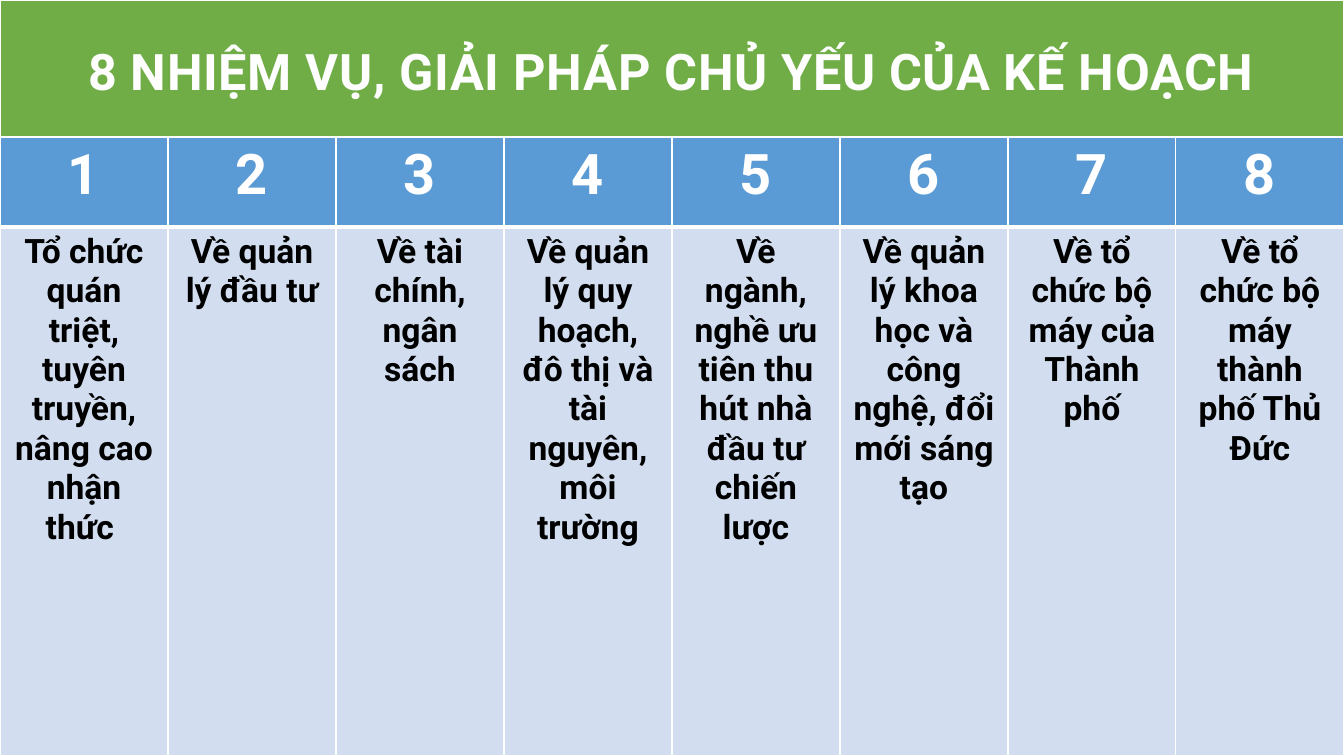
from lxml import etree
from pptx import Presentation
from pptx.dml.color import RGBColor
from pptx.enum.shapes import MSO_SHAPE
from pptx.enum.text import MSO_AUTO_SIZE, PP_ALIGN
from pptx.oxml import parse_xml
from pptx.oxml.ns import nsdecls, qn
from pptx.util import Pt

RECT = MSO_SHAPE.RECTANGLE
CENTER = PP_ALIGN.CENTER
GROW = MSO_AUTO_SIZE.SHAPE_TO_FIT_TEXT

WHITE = RGBColor(0xFF, 0xFF, 0xFF)
OFF_WHITE = RGBColor(0xFE, 0xFE, 0xFE)
BLACK = RGBColor(0, 0, 0)
GREEN = RGBColor(0x70, 0xAD, 0x47)
BLUE = RGBColor(0x5B, 0x9B, 0xD5)
PALE_BLUE = RGBColor(0xD2, 0xDE, 0xEF)

WIDTH, HEIGHT, BANNER_HEIGHT = 960, 540, 98
HEADER_HEIGHT = 64

TITLE = "8 NHIỆM VỤ, GIẢI PHÁP CHỦ YẾU CỦA KẾ HOẠCH"
TASKS = [
    "Tổ chức quán triệt, tuyên truyền, nâng cao nhận thức ",
    "Về quản lý đầu tư",
    "Về tài chính, ngân sách",
    "Về quản lý quy hoạch, đô thị và tài nguyên, môi trường",
    "Về ngành, nghề ưu tiên thu hút nhà đầu tư chiến lược",
    "Về quản lý khoa học và công nghệ, đổi mới sáng tạo",
    "Về tổ chức bộ máy của Thành phố",
    "Về tổ chức bộ máy thành phố Thủ Đức",
]


def write(tf, text, size, color):
    p = tf.paragraphs[0]
    p.alignment = CENTER
    r = p.add_run()
    r.text = text
    for name, value in {"name": "Roboto", "size": Pt(size), "bold": True}.items():
        setattr(r.font, name, value)
    r.font.color.rgb = color
    return r


def add_glow_edge(r):
    props = r.font._element
    props.set("spc", "50")
    outline = parse_xml(
        f'<a:ln {nsdecls("a")} w="9525"><a:solidFill>'
        f'<a:srgbClr val="{BLUE}"/></a:solidFill></a:ln>')
    shadow = parse_xml(
        f'<a:effectLst {nsdecls("a")}><a:outerShdw blurRad="12700" dist="38100" '
        f'dir="2700000" algn="tl"><a:srgbClr val="{BLUE}"/></a:outerShdw></a:effectLst>')
    props.insert(0, outline)
    props.find(qn("a:solidFill")).addnext(shadow)


def add_banner(s, x, y, w, h):
    bar = s.shapes.add_shape(RECT, Pt(x), Pt(y), Pt(w), Pt(h))
    bar.shadow.inherit = False
    bar.fill.solid()
    bar.fill.fore_color.rgb = GREEN
    bar.line.color.rgb = WHITE
    bar.line.width = Pt(1.5)
    title = s.shapes.add_textbox(Pt(x + 46), Pt(y + 25), Pt(w - 92), Pt(51))
    tf = title.text_frame
    tf.word_wrap = True
    tf.auto_size = GROW
    add_glow_edge(write(tf, TITLE, 36, OFF_WHITE))


def style_cell(cell, fill, borders):
    props = cell._tc.get_or_add_tcPr()
    for side, width in borders.items():
        line = etree.SubElement(props, qn(f"a:ln{side}"), w=str(Pt(width)))
        solid = etree.SubElement(line, qn("a:solidFill"))
        etree.SubElement(solid, qn("a:srgbClr"), val=str(WHITE))
    cell.fill.solid()
    cell.fill.fore_color.rgb = fill


def add_task_table(s, x, y, w, h):
    frame = s.shapes.add_table(2, len(TASKS), Pt(x), Pt(y), Pt(w), Pt(h))
    table = frame.table
    table.rows[0].height = Pt(HEADER_HEIGHT)
    table.rows[1].height = Pt(h - HEADER_HEIGHT)
    for i, task in enumerate(TASKS):
        table.columns[i].width = Pt(w / len(TASKS))
        head, body = table.cell(0, i), table.cell(1, i)
        style_cell(head, BLUE, {"L": 1, "R": 1, "T": 1, "B": 3})
        style_cell(body, PALE_BLUE, {"L": 1, "R": 1, "T": 3, "B": 1})
        write(head.text_frame, str(i + 1), 40, WHITE)
        write(body.text_frame, task, 24, BLACK)


def main():
    prs = Presentation()
    prs.slide_width, prs.slide_height = Pt(WIDTH), Pt(HEIGHT)
    s = prs.slides.add_slide(prs.slide_layouts[6])
    add_task_table(s, 0, BANNER_HEIGHT, WIDTH, HEIGHT - BANNER_HEIGHT)
    add_banner(s, 0, 0, WIDTH, BANNER_HEIGHT)
    prs.save("out.pptx")


if __name__ == "__main__":
    main()
